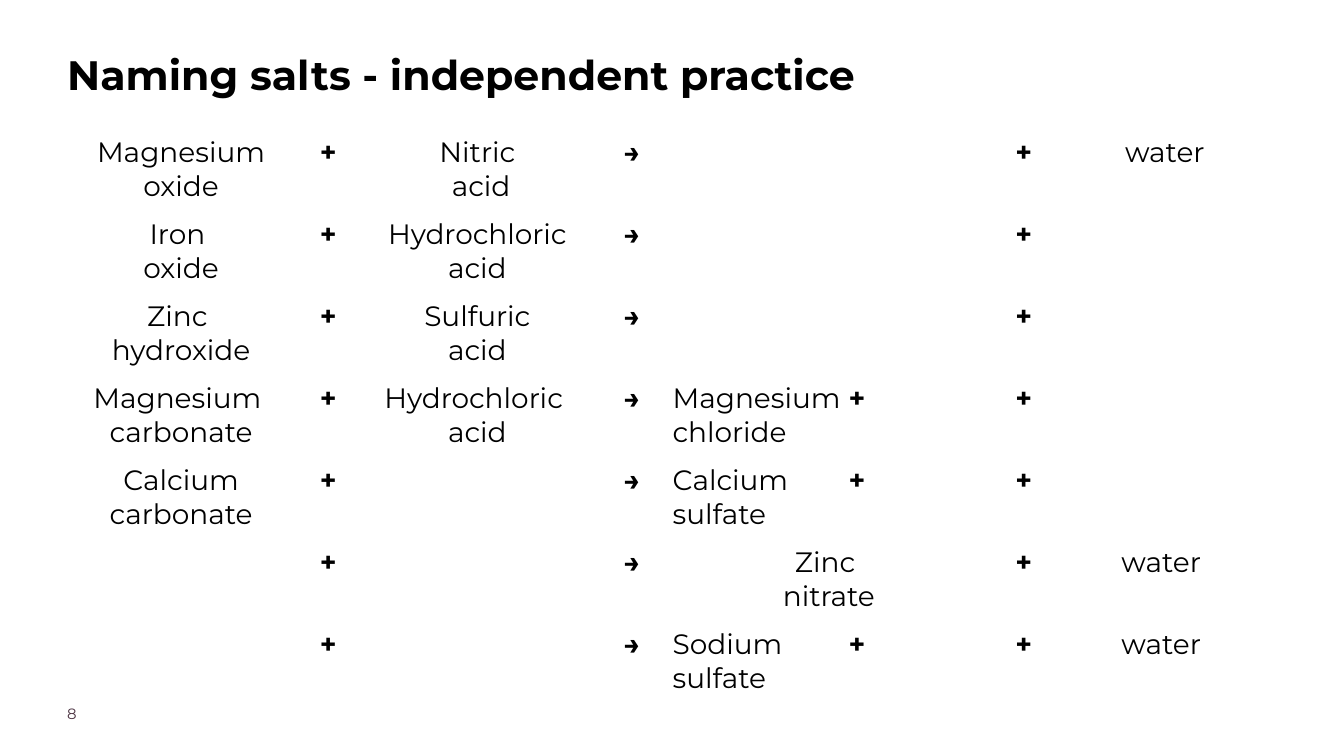
from lxml.etree import SubElement
from pptx import Presentation
from pptx.dml.color import RGBColor
from pptx.enum.text import MSO_ANCHOR, PP_ALIGN
from pptx.oxml.ns import qn
from pptx.util import Inches, Pt

BLACK = RGBColor(0x00, 0x00, 0x00)
PLUM = RGBColor(0x4B, 0x32, 0x41)
FONT = "Montserrat"

COL_WIDTHS = [3.77, 0.61, 3.83, 0.89, 4.85, 0.95, 3.25]
ROW_HEIGHT = 1.22
PLUS_TAB = 2.62
SIGNS = ("+", "→ ")
EQUATIONS = [
    ("Magnesium\noxide", "Nitric\n acid", "", "water"),
    ("Iron \noxide", "Hydrochloric\nacid", "", ""),
    ("Zinc \nhydroxide", "Sulfuric\nacid", "", ""),
    ("Magnesium \ncarbonate", "Hydrochloric \nacid", "Magnesium\t+\nchloride", ""),
    ("Calcium\ncarbonate", "", "Calcium\t+\nsulfate", ""),
    ("", "", "Zinc \nnitrate", "water "),
    ("", "", "Sodium\t+\nsulfate", "water "),
]


def format_run(r, size, color=BLACK, bold=False):
    r.font.name = FONT
    r.font.size = Pt(size)
    r.font.color.rgb = color
    r.font.bold = bold


def clear_insets(tf):
    tf.margin_left = tf.margin_right = tf.margin_top = tf.margin_bottom = 0
    tf.vertical_anchor = MSO_ANCHOR.TOP
    tf.word_wrap = True


def add_title(s, text):
    title = s.shapes.title
    title.left, title.top = Inches(1), Inches(0.62)
    title.width, title.height = Inches(14.44), Inches(1.78)
    tf = title.text_frame
    clear_insets(tf)
    tf.text = text
    p = tf.paragraphs[0]
    p.alignment = PP_ALIGN.LEFT
    p.line_spacing = 1.15
    format_run(p.runs[0], 44, bold=True)


def add_page_number(s, text):
    box = s.shapes.add_textbox(Inches(1), Inches(10.48), Inches(1.57), Inches(0.39))
    tf = box.text_frame
    clear_insets(tf)
    tf.text = text
    format_run(tf.paragraphs[0].runs[0], 16, PLUM)


def add_tab_stop(p, position):
    tabs = SubElement(p._p.get_or_add_pPr(), qn("a:tabLst"))
    SubElement(tabs, qn("a:tab"), pos=str(Inches(position)), algn="l")


def fill_cell(cell, text):
    cell.fill.background()
    cell.margin_left = cell.margin_right = Inches(0.1)
    cell.margin_top = cell.margin_bottom = Inches(0.1)
    if not text:
        return
    tf = cell.text_frame
    tf.text = text.replace("\t+", "")
    for p in tf.paragraphs:
        p.alignment = PP_ALIGN.LEFT if "\t" in text else PP_ALIGN.CENTER
        format_run(p.runs[0], 30, bold=text in SIGNS)
    if "\t" in text:
        p = tf.paragraphs[0]
        add_tab_stop(p, PLUS_TAB)
        r = p.add_run()
        r.text = "\t+"
        format_run(r, 30, bold=True)


def add_equations(s):
    rows, cols = len(EQUATIONS), len(COL_WIDTHS)
    frame = s.shapes.add_table(rows, cols, Inches(0.81), Inches(1.92),
                               Inches(sum(COL_WIDTHS)), Inches(rows * ROW_HEIGHT))
    table = frame.table
    table.first_row = False
    table.horz_banding = False
    for column, width in zip(table.columns, COL_WIDTHS):
        column.width = Inches(width)
    for row, (base, acid, salt, other) in zip(table.rows, EQUATIONS):
        row.height = Inches(ROW_HEIGHT)
        texts = (base, "+", acid, "→ ", salt, "+", other)
        for cell, text in zip(row.cells, texts):
            fill_cell(cell, text)


def main():
    prs = Presentation()
    prs.slide_width, prs.slide_height = Inches(20), Inches(11.25)
    s = prs.slides.add_slide(prs.slide_layouts[5])
    add_equations(s)
    add_title(s, "Naming salts - independent practice")
    add_page_number(s, "8")
    prs.save("out.pptx")


if __name__ == "__main__":
    main()
